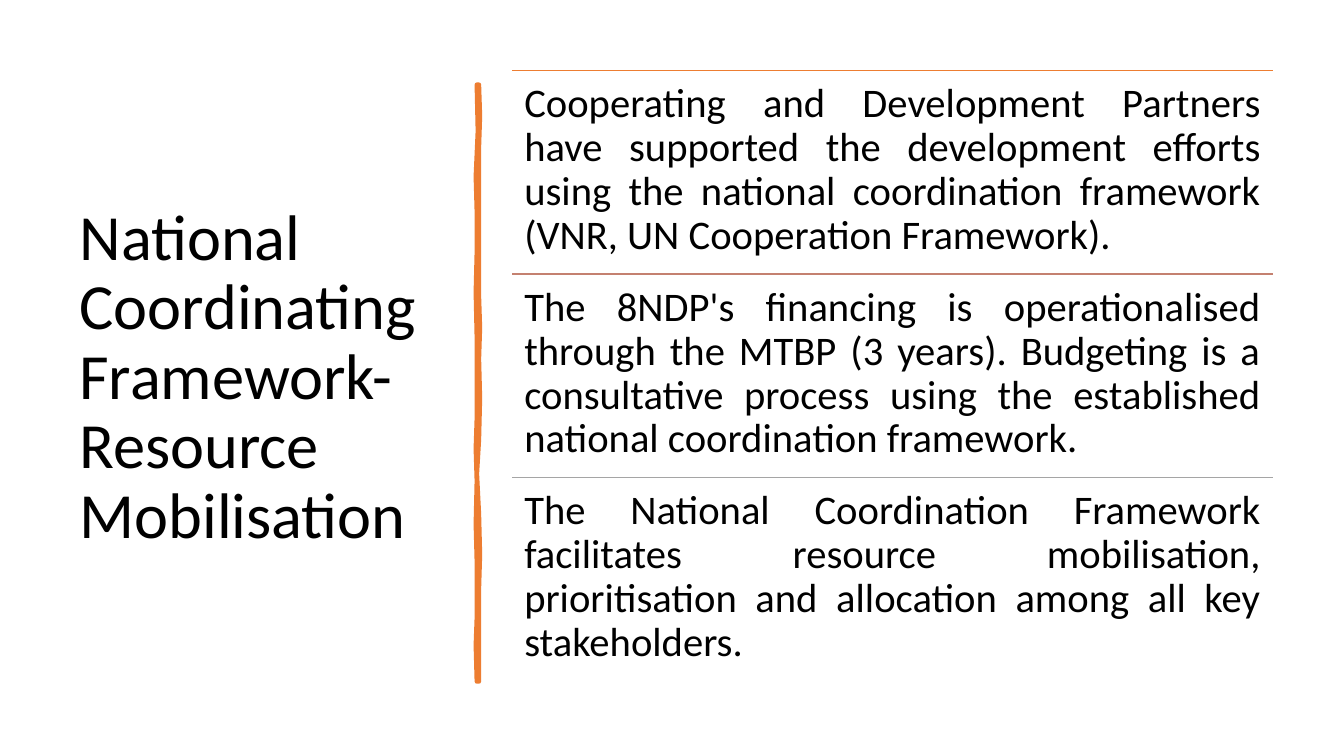
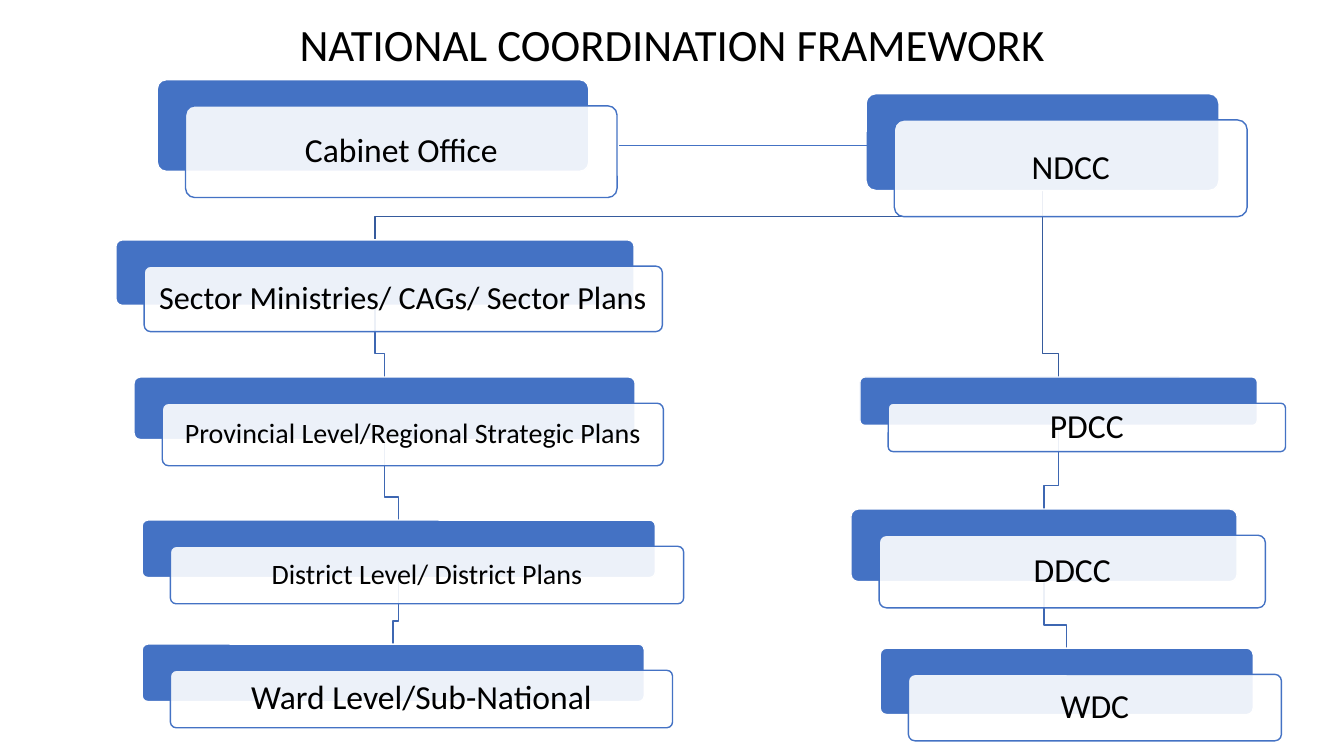
from dataclasses import dataclass
from typing import NamedTuple

from lxml import etree
from pptx import Presentation
from pptx.dml.color import RGBColor
from pptx.enum.shapes import MSO_CONNECTOR, MSO_SHAPE
from pptx.enum.text import MSO_ANCHOR, PP_ALIGN
from pptx.oxml.ns import qn
from pptx.util import Inches, Pt

STRAIGHT = MSO_CONNECTOR.STRAIGHT
ROUNDED = MSO_SHAPE.ROUNDED_RECTANGLE
TOP, MIDDLE = MSO_ANCHOR.TOP, MSO_ANCHOR.MIDDLE
LEFT, CENTER, JUSTIFY = PP_ALIGN.LEFT, PP_ALIGN.CENTER, PP_ALIGN.JUSTIFY


@dataclass(frozen=True)
class Theme:
    font: str = "Calibri"
    ink: str = "000000"
    white: str = "FFFFFF"
    blue: str = "4472C4"
    link: str = "3E67B2"
    dark_link: str = "365B9D"
    orange: str = "ED7D31"
    clay: str = "C48170"
    grey: str = "A5A5A5"
    side_title: int = 46
    top_title: int = 32
    body: int = 29
    card: int = 24
    long_card: int = 23
    small_card: int = 20
    line: float = 1
    thin_line: float = 0.5
    brush: float = 3.25


THEME = Theme()


class Card(NamedTuple):
    text: str
    left: float
    top: float
    width: float
    height: float
    size: int = THEME.card

    @property
    def center(self):
        return self.left + self.width / 2

    @property
    def bottom(self):
        return self.top + self.height


class SlideBuilder:
    """Holds the theme and the current slide."""

    card_shift = (0.28, 0.26)
    link_bend = 0.23

    def __init__(self, deck, theme):
        self.deck = deck
        self.theme = theme
        self.page = None

    def new_page(self):
        self.page = self.deck.slides.add_slide(self.deck.slide_layouts[6])

    def set_text(self, shape, text, size, align, anchor, margins):
        frame = shape.text_frame
        frame.word_wrap = True
        frame.vertical_anchor = anchor
        frame.margin_left = frame.margin_right = Inches(margins[0])
        frame.margin_top = frame.margin_bottom = Inches(margins[1])
        para = frame.paragraphs[0]
        para.text = text
        para.alignment = align
        para.line_spacing = 0.9
        para.font.name = self.theme.font
        para.font.size = Pt(size)
        para.font.color.rgb = RGBColor.from_string(self.theme.ink)

    def text(self, area, text, size, align=LEFT, anchor=MIDDLE, margins=(0.1, 0.05)):
        box = self.page.shapes.add_textbox(*map(Inches, area))
        self.set_text(box, text, size, align, anchor, margins)

    def outline(self, shape, color, width):
        shape.line.color.rgb = RGBColor.from_string(color)
        shape.line.width = Pt(width)

    def fill(self, shape, color):
        shape.fill.solid()
        shape.fill.fore_color.rgb = RGBColor.from_string(color)

    def rule(self, start, end, color, width):
        line = self.page.shapes.add_connector(STRAIGHT, *map(Inches, start + end))
        self.outline(line, color, width)
        etree.SubElement(line._element.spPr, qn("a:effectLst"))

    def freeform(self, points, color, width, closed=False):
        first, *rest = [(Inches(x), Inches(y)) for x, y in points]
        outline = self.page.shapes.build_freeform(*first)
        outline.add_line_segments(rest, close=closed)
        shape = outline.convert_to_shape()
        shape.shadow.inherit = False
        if closed:
            self.fill(shape, color)
        else:
            shape.fill.background()
        self.outline(shape, color, width)

    def link(self, parent, child, color):
        bend = child.top - self.link_bend
        self.freeform([(parent.center, parent.bottom), (parent.center, bend),
                       (child.center, bend), (child.center, child.top)],
                      color, self.theme.line)

    def panel(self, area, fill, line):
        shape = self.page.shapes.add_shape(ROUNDED, *map(Inches, area))
        shape.adjustments[0] = 0.1
        shape.shadow.inherit = False
        self.fill(shape, fill)
        self.outline(shape, line, self.theme.line)
        return shape

    def card(self, card):
        theme = self.theme
        right, down = self.card_shift
        size = (card.width, card.height)
        self.panel((card.left, card.top) + size, theme.blue, theme.white)
        front = self.panel((card.left + right, card.top + down) + size,
                           theme.white, theme.blue)
        color = front._element.spPr.find(qn("a:solidFill")).find(qn("a:srgbClr"))
        etree.SubElement(color, qn("a:alpha"), val="90000")
        self.set_text(front, card.text, card.size, CENTER, MIDDLE, (0.1, 0))


# Brush stroke edges, the right one downwards and the left one upwards
BRUSH_STROKE = [
    (4.75, 0.84), (4.76, 1.15), (4.75, 1.46), (4.75, 2.26), (4.75, 2.94),
    (4.76, 3.25), (4.75, 3.56), (4.76, 3.95), (4.75, 4.36), (4.73, 4.7),
    (4.75, 5.1), (4.76, 5.5), (4.75, 5.84), (4.75, 6.76),
    (4.73, 6.76), (4.72, 6.4), (4.73, 6.13), (4.73, 5.57), (4.72, 5.2),
    (4.73, 4.77), (4.72, 4.45), (4.73, 4.15), (4.73, 3.35), (4.72, 2.9),
    (4.73, 2.5), (4.73, 2.1), (4.72, 1.75), (4.74, 1.3), (4.73, 0.84),
]

POINTS = [
    (THEME.orange, "Cooperating and Development Partners have supported the "
     "development efforts using the national coordination framework "
     "(VNR, UN Cooperation Framework)."),
    (THEME.clay, "The 8NDP's financing is operationalised through the MTBP "
     "(3 years). Budgeting is a consultative process using the established "
     "national coordination framework."),
    (THEME.grey, "The National Coordination Framework facilitates resource "
     "mobilisation, prioritisation and allocation among all key stakeholders."),
]

CABINET = Card("Cabinet Office", 1.56, 0.79, 4.28, 0.91)
NDCC = Card("NDCC", 8.59, 0.93, 3.5, 0.96)
PLANS = [
    Card("Sector Ministries/ CAGs/ Sector Plans", 1.15, 2.38, 5.14, 0.65,
         THEME.long_card),
    Card("Provincial Level/Regional Strategic Plans", 1.33, 3.74, 4.97, 0.62,
         THEME.small_card),
    Card("District Level/ District Plans", 1.41, 5.16, 5.09, 0.57,
         THEME.small_card),
    Card("Ward Level/Sub-National", 1.41, 6.39, 4.98, 0.57),
]
COMMITTEES = [
    Card("PDCC", 8.53, 3.74, 3.94, 0.48),
    Card("DDCC", 8.44, 5.05, 3.83, 0.72),
    Card("WDC", 8.73, 6.43, 3.7, 0.66),
]


def resource_mobilisation(builder):
    theme = builder.theme
    builder.new_page()
    builder.text((0.69, 0.7, 3.74, 6.11),
                 "National Coordinating Framework- Resource Mobilisation",
                 theme.side_title)
    builder.freeform(BRUSH_STROKE, theme.orange, theme.brush, closed=True)

    # Ruled rows of equal height
    left, top, width, height = 5.08, 0.7, 7.55, 2.02
    for row, (color, text) in enumerate(POINTS):
        y = top + row * height
        builder.rule((left, y), (left + width, y), color, theme.line)
        builder.text((left, y, width, height), text, theme.body,
                     JUSTIFY, TOP, (0.12, 0.12))


def coordination_framework(builder):
    theme = builder.theme
    builder.new_page()
    builder.text((0.92, 0.14, 11.5, 0.65), "NATIONAL COORDINATION FRAMEWORK",
                 theme.top_title, CENTER)

    # Links lie behind the cards; both branches start at NDCC
    for branch in (COMMITTEES, PLANS):
        builder.link(NDCC, branch[0], theme.dark_link)
        for parent, child in zip(branch, branch[1:]):
            builder.link(parent, child, theme.link)

    for card in [CABINET, NDCC, *PLANS, *COMMITTEES]:
        builder.card(card)
    builder.rule((6.14, 1.44), (8.65, 1.44), theme.blue, theme.thin_line)


def main():
    deck = Presentation()
    deck.slide_width, deck.slide_height = Inches(13.33), Inches(7.5)
    builder = SlideBuilder(deck, THEME)
    resource_mobilisation(builder)
    coordination_framework(builder)
    deck.save("out.pptx")


if __name__ == "__main__":
    main()
